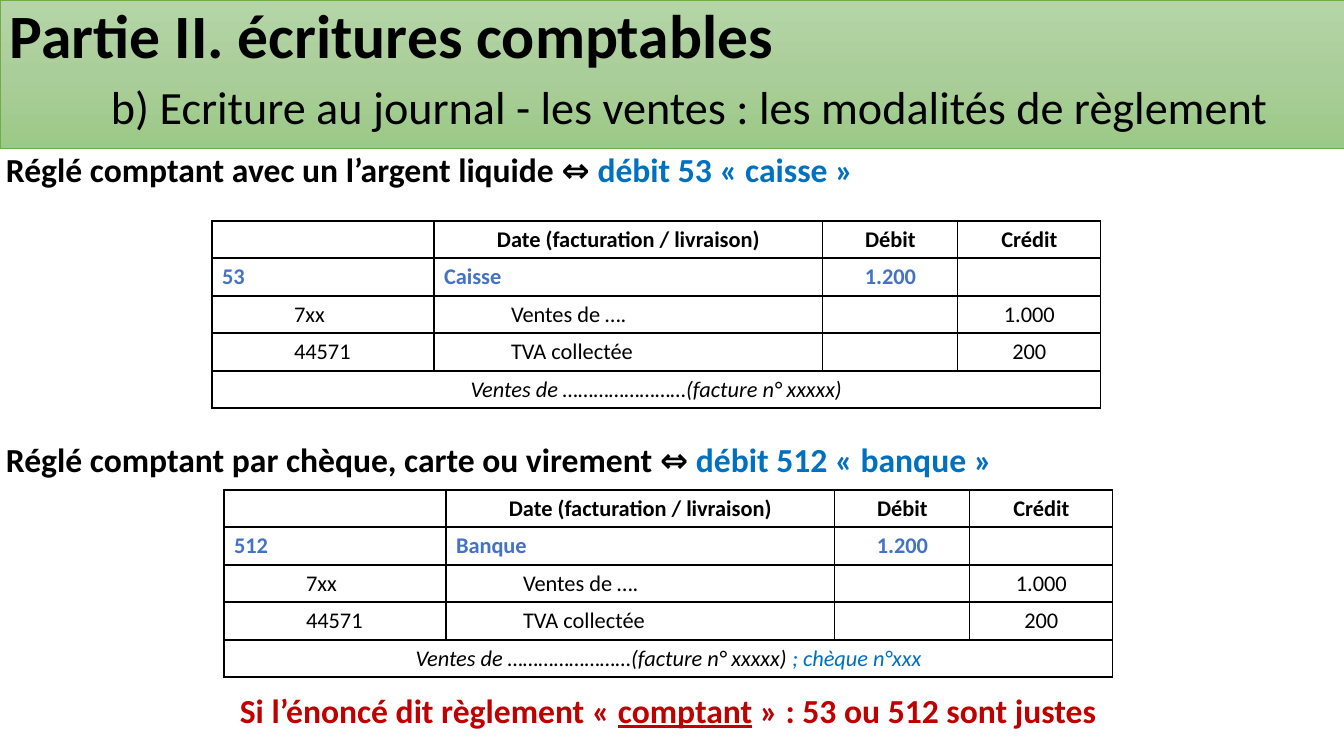
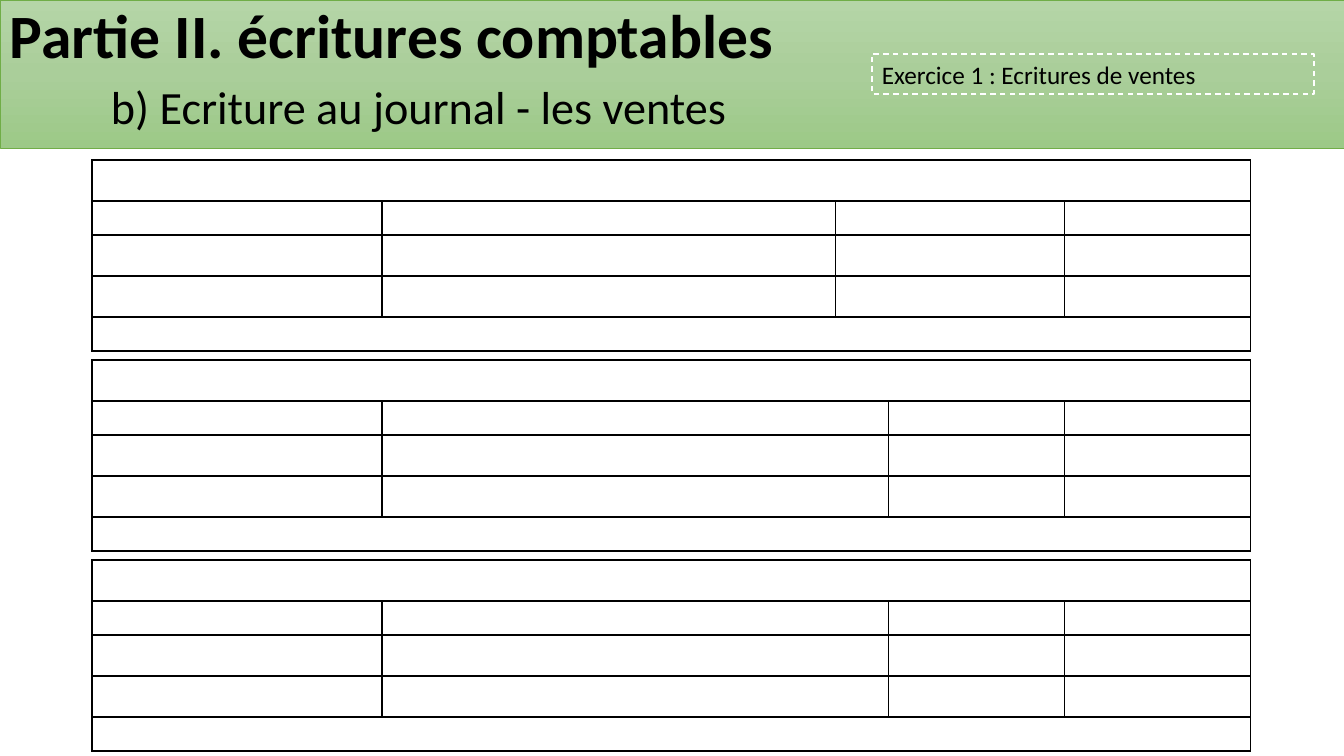
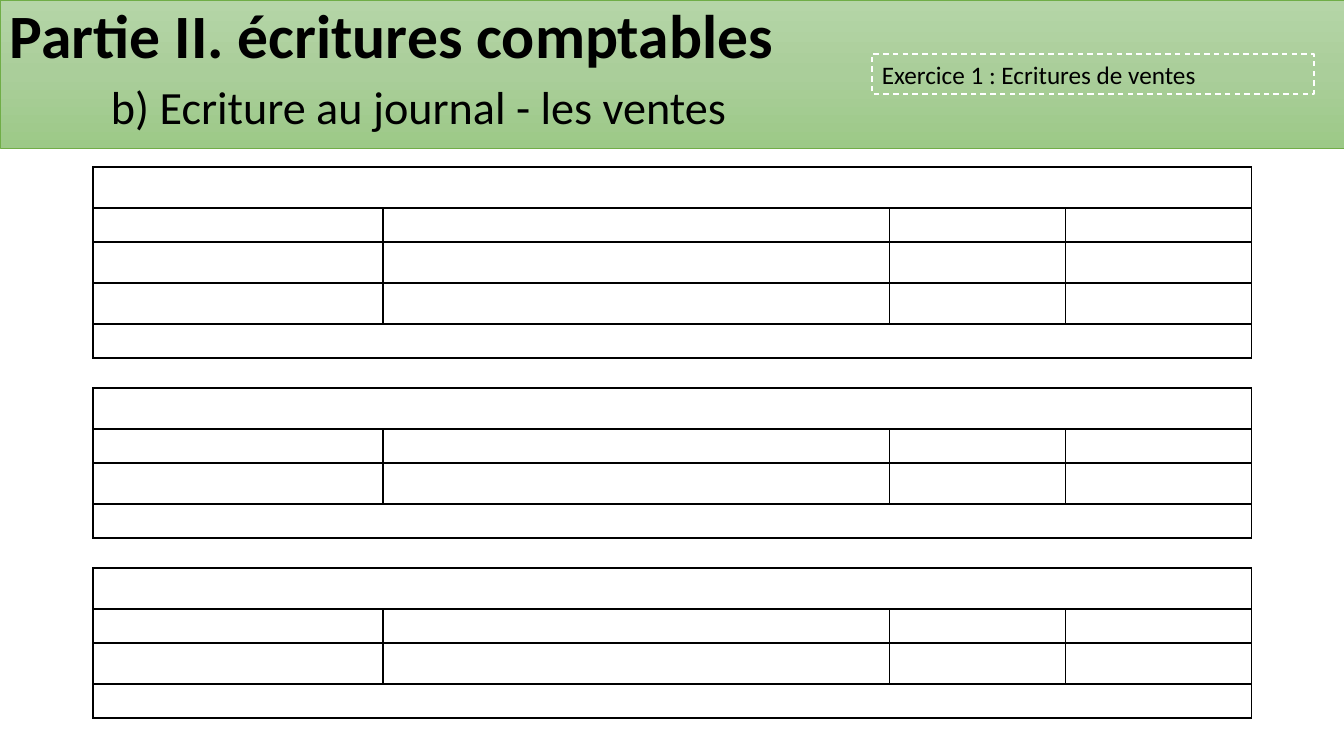
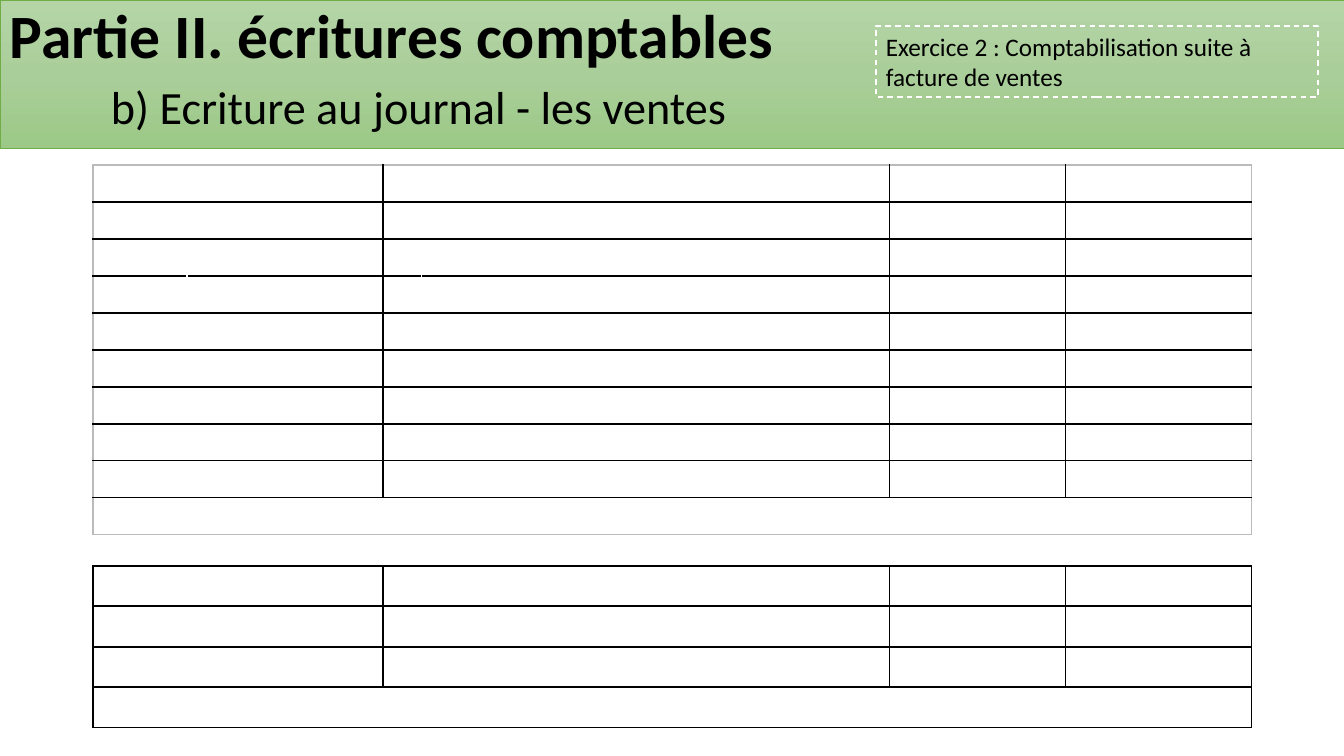
from copy import deepcopy
from dataclasses import dataclass, field

from lxml import etree
from pptx import Presentation
from pptx.dml.color import RGBColor
from pptx.enum.dml import MSO_LINE
from pptx.enum.shapes import MSO_SHAPE
from pptx.enum.text import MSO_ANCHOR, PP_ALIGN
from pptx.oxml.ns import qn
from pptx.util import Emu, Pt

RECTANGLE = MSO_SHAPE.RECTANGLE
LEFT, CENTER = PP_ALIGN.LEFT, PP_ALIGN.CENTER
TOP, MIDDLE = MSO_ANCHOR.TOP, MSO_ANCHOR.MIDDLE
DASH = MSO_LINE.DASH

SLIDE_W, SLIDE_H = 1344, 756
EMU_PER_PX = 12192000 / SLIDE_W
FONT = "Calibri"
COLORS = {
    "ink": "000000",
    "white": "FFFFFF",
    "account": "4472C4",
    "highlight": "0070C0",
    "warning": "C00000",
    "hairline": "BBBBBB",
    "band_line": "70AD47",
}
BAND_STOPS = ((0, "B5D5A7"), (50, "AACE9A"), (100, "9CC987"))
BAND_H = 148
SUBTITLE_INDENT = 101

# Row kinds: one full-width cell, paired account columns, or an indented line
ROW_SPANS = {
    "F": ((0, 5),),
    "P": ((0, 1), (2, 3), (4, 4), (5, 5)),
    "S": tuple((col, col) for col in range(6)),
}
INDENT_SEAMS = (1, 3)

ENTRY_COLS = (72, 150, 67, 322, 135, 143)
ENTRY_HEIGHTS = (37, 38, 37, 38, 37)
EXERCISE_COLS = (95, 195, 87, 420, 176, 186)
WIDE_DEBIT_COLS = (95, 195, 87, 367, 229, 186)
INVOICE_COLS = (94, 196, 39, 468, 176, 186)


@dataclass(frozen=True)
class Span:
    text: str
    size: int = 16
    color: str = "ink"
    bold: bool = False
    italic: bool = False
    underline: bool = False


@dataclass(frozen=True)
class CellText:
    spans: tuple[Span, ...]
    align: int = LEFT


@dataclass(frozen=True)
class Journal:
    left: int
    top: int
    cols: tuple[int, ...]
    kinds: str
    heights: tuple[int, ...]
    texts: dict[tuple[int, int], CellText] = field(default_factory=dict)
    outline: str = "ink"
    seam: str = ""


def px(length: int) -> Emu:
    return Emu(round(length * EMU_PER_PX))


def box(left: int, top: int, width: int, height: int) -> tuple[Emu, ...]:
    return px(left), px(top), px(width), px(height)


def rgb(name: str) -> RGBColor:
    return RGBColor.from_string(COLORS[name])


def write(paragraph, spans: tuple[Span, ...]) -> None:
    for span in spans:
        run = paragraph.add_run()
        run.text = span.text
        font = run.font
        font.name, font.size = FONT, Pt(span.size)
        font.bold, font.italic = span.bold, span.italic
        font.underline = span.underline
        font.color.rgb = rgb(span.color)


# Header band and its labels
def add_rectangle(slide, area: tuple[int, ...], line: str, width: float, anchor):
    shape = slide.shapes.add_shape(RECTANGLE, *box(*area))
    shape.shadow.inherit = False
    shape.line.color.rgb = rgb(line)
    shape.line.width = Pt(width)
    frame = shape.text_frame
    frame.word_wrap = True
    frame.vertical_anchor = anchor
    frame.paragraphs[0].alignment = LEFT
    return shape


def add_tab_stop(paragraph, position: int) -> None:
    tabs = etree.SubElement(paragraph._p.get_or_add_pPr(), qn("a:tabLst"))
    etree.SubElement(tabs, qn("a:tab"), pos=str(px(position)), algn="l")


def add_header(slide, subtitle: str) -> None:
    band = add_rectangle(slide, (0, 0, SLIDE_W, BAND_H), "band_line", 0.5, MIDDLE)
    band.fill.gradient()
    band.fill.gradient_angle = 270
    stops = band.element.spPr.find(qn("a:gradFill")).find(qn("a:gsLst"))
    stops.insert(1, deepcopy(stops[0]))
    for stop, (position, color) in zip(band.fill.gradient_stops, BAND_STOPS):
        stop.position = position / 100
        stop.color.rgb = RGBColor.from_string(color)
    band.text_frame.margin_top = 0
    heading = band.text_frame.paragraphs[0]
    heading.line_spacing = 0.9
    add_tab_stop(heading, SUBTITLE_INDENT)
    write(heading, (Span("Partie II. écritures comptables", 44, bold=True),))
    heading.add_line_break()
    write(heading, (Span("\t", 44, bold=True), Span(subtitle, 33)))


def add_exercise_label(slide, area: tuple[int, ...], label: str) -> None:
    frame_box = add_rectangle(slide, area, "white", 1, TOP)
    frame_box.fill.background()
    frame_box.line.dash_style = DASH
    write(frame_box.text_frame.paragraphs[0], (Span(label, 18),))


def add_statement(slide, center_y: int, spans: tuple[Span, ...], align=LEFT) -> None:
    statement = slide.shapes.add_textbox(*box(-4, center_y - 26, SLIDE_W, 52))
    frame = statement.text_frame
    frame.word_wrap = True
    frame.vertical_anchor = MIDDLE
    frame.paragraphs[0].alignment = align
    write(frame.paragraphs[0], spans)


# Journal tables
def add_border(cell, side: str, color: str) -> None:
    line = etree.SubElement(cell._tc.get_or_add_tcPr(), qn("a:ln" + side), w="12700")
    if color:
        solid = etree.SubElement(line, qn("a:solidFill"))
        etree.SubElement(solid, qn("a:srgbClr"), val=COLORS[color])
    else:
        etree.SubElement(line, qn("a:noFill"))


def style_cell(journal: Journal, cell, row: int, col: int, first: int, last: int) -> None:
    split = journal.kinds[row] == "S"

    def vertical(edge: int) -> str:
        if edge in (0, len(journal.cols)):
            return journal.outline
        return journal.seam if split and edge in INDENT_SEAMS else "ink"

    borders = {
        "L": vertical(first) if col == first else "",
        "R": vertical(last + 1) if col in (first, last) else "",
        "T": journal.outline if row == 0 else "ink",
        "B": journal.outline if row == len(journal.kinds) - 1 else "ink",
    }
    for side, color in borders.items():
        add_border(cell, side, color)
    cell.fill.background()

    paragraph = cell.text_frame.paragraphs[0]
    content = journal.texts.get((row, col))
    if content:
        paragraph.alignment = content.align
        write(paragraph, content.spans)
    else:
        etree.SubElement(paragraph._p, qn("a:endParaRPr"), sz="1400")


def add_journal(slide, journal: Journal) -> None:
    area = box(journal.left, journal.top, sum(journal.cols), sum(journal.heights))
    table = slide.shapes.add_table(len(journal.kinds), len(journal.cols), *area).table
    table.first_row = table.horz_banding = False
    for column, width in zip(table.columns, journal.cols):
        column.width = px(width)
    for row, (kind, height) in enumerate(zip(journal.kinds, journal.heights)):
        table.rows[row].height = px(height)
        for first, last in ROW_SPANS[kind]:
            if last > first:
                table.cell(row, first).merge(table.cell(row, last))
            for col in range(first, last + 1):
                style_cell(journal, table.cell(row, col), row, col, first, last)


def add_sale_entry(slide, left: int, top: int, number: str, account: str,
                   caption: tuple[Span, ...]) -> None:
    def header(text: str) -> CellText:
        return CellText((Span(text, bold=True),), CENTER)

    def debited(text: str, align=LEFT) -> CellText:
        return CellText((Span(text, color="account", bold=True),), align)

    def plain(text: str, align=LEFT) -> CellText:
        return CellText((Span(text),), align)

    texts = {
        (0, 2): header("Date (facturation / livraison)"),
        (0, 4): header("Débit"),
        (0, 5): header("Crédit"),
        (1, 0): debited(number),
        (1, 2): debited(account),
        (1, 4): debited("1.200", CENTER),
        (2, 1): plain("7xx"),
        (2, 3): plain("Ventes de …."),
        (2, 5): plain("1.000", CENTER),
        (3, 1): plain("44571"),
        (3, 3): plain("TVA collectée"),
        (3, 5): plain("200", CENTER),
        (4, 0): CellText(caption, CENTER),
    }
    add_journal(slide, Journal(left, top, ENTRY_COLS, "PPSSF", ENTRY_HEIGHTS, texts))


def add_exercise_stack(slide, left: int, top: int, gap: int,
                       entries: tuple[tuple[str, tuple[int, ...]], ...]) -> None:
    heights_by_kind = {"F": 34, "P": 34, "S": 41}
    for kinds, cols in entries:
        heights = (41,) + tuple(heights_by_kind[kind] for kind in kinds[1:])
        add_journal(slide, Journal(left, top, cols, kinds, heights))
        top += sum(heights) + gap


# Slides
def payment_slide(slide) -> None:
    def bold(text: str, color: str = "ink", underline: bool = False) -> Span:
        return Span(text, 24, color, bold=True, underline=underline)

    add_header(slide, "b) Ecriture au journal - les ventes : les modalités de règlement")
    add_statement(slide, 169, (
        bold("Réglé comptant avec un l’argent liquide ⇔"),
        bold(" débit 53 « caisse »", "highlight"),
    ))
    add_statement(slide, 459, (
        bold("Réglé comptant par chèque, carte ou virement ⇔ "),
        bold("débit 512 « banque »", "highlight"),
    ))
    add_statement(slide, 710, (
        bold("Si l’énoncé dit règlement « ", "warning"),
        bold("comptant", "warning", underline=True),
        bold(" » : 53 ou 512 sont justes", "warning"),
    ), CENTER)
    invoice = "Ventes de ……………………(facture n° xxxxx)"
    add_sale_entry(slide, 212, 221, "53", "Caisse", (Span(invoice, italic=True),))
    add_sale_entry(slide, 224, 490, "512", "Banque", (
        Span(invoice + " ", italic=True),
        Span("; chèque n°xxx", color="highlight", italic=True),
    ))


def sales_exercise_slide(slide, left: int, top: int, gap: int, entries) -> None:
    add_header(slide, "b) Ecriture au journal - les ventes")
    add_exercise_label(slide, (872, 54, 442, 40), "Exercice 1 : Ecritures de ventes")
    add_exercise_stack(slide, left, top, gap, entries)


def invoice_exercise_slide(slide) -> None:
    add_header(slide, "b) Ecriture au journal - les ventes")
    add_exercise_label(slide, (876, 26, 442, 71),
                       "Exercice 2 : Comptabilisation suite à facture de ventes")
    add_journal(slide, Journal(93, 165, INVOICE_COLS, "PPPSSSSSSF", (37,) * 10,
                               outline="hairline", seam="white"))
    add_journal(slide, Journal(93, 566, EXERCISE_COLS, "PPSF", (40, 41) * 2))


def main() -> None:
    deck = Presentation()
    deck.slide_width, deck.slide_height = px(SLIDE_W), px(SLIDE_H)
    blank = deck.slide_layouts[6]

    def new_slide():
        return deck.slides.add_slide(blank)

    long_entry = ("FPSSF", EXERCISE_COLS)
    short_entry = ("FPSF", EXERCISE_COLS)
    payment_slide(new_slide())
    sales_exercise_slide(new_slide(), 92, 160, 9,
                         (("FPSSF", WIDE_DEBIT_COLS), long_entry, long_entry))
    sales_exercise_slide(new_slide(), 93, 167, 30,
                         (long_entry, short_entry, short_entry))
    invoice_exercise_slide(new_slide())
    deck.save("out.pptx")


if __name__ == "__main__":
    main()
